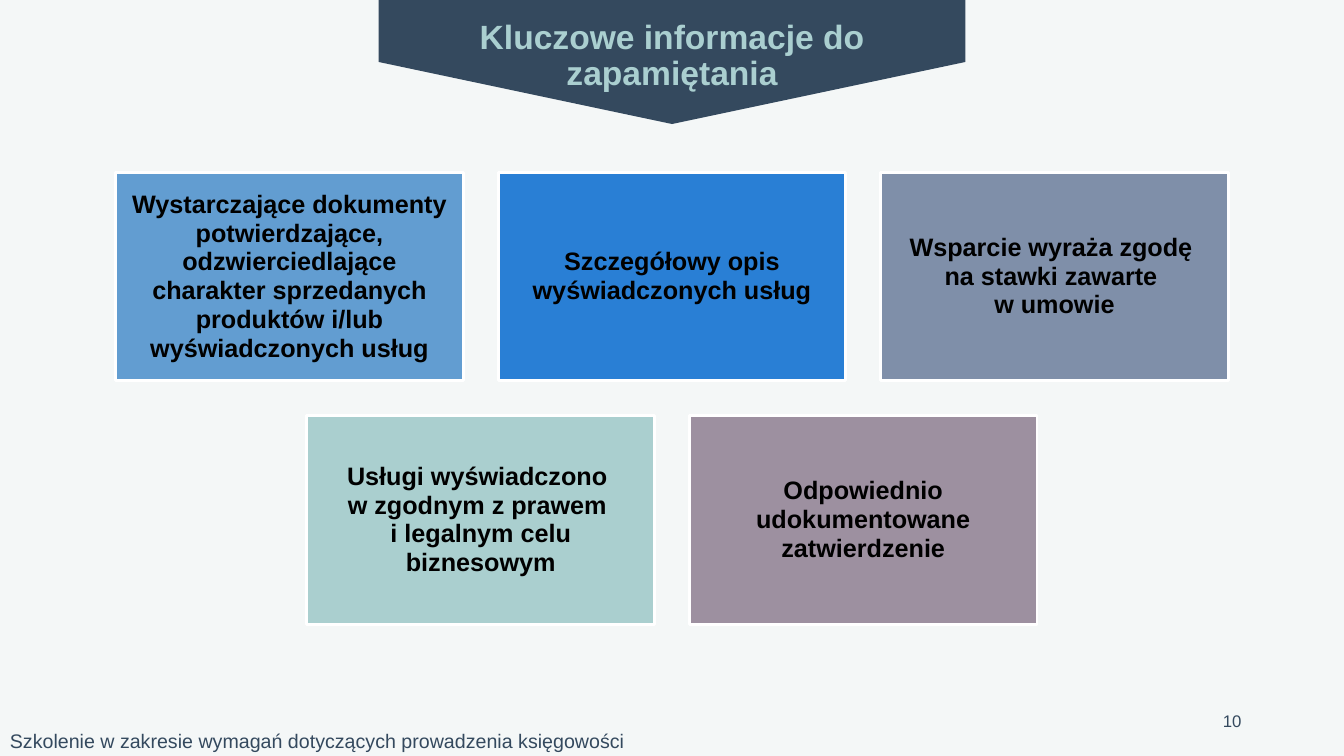
from dataclasses import dataclass

from pptx import Presentation
from pptx.dml.color import RGBColor
from pptx.enum.shapes import MSO_SHAPE
from pptx.enum.text import MSO_ANCHOR, MSO_AUTO_SIZE, PP_ALIGN
from pptx.util import Pt


@dataclass(frozen=True)
class Theme:
    font: str = "Arial"
    back: str = "F4F7F7"
    navy: str = "34495E"
    mint: str = "AACFD0"
    edge: str = "FFFFFF"
    ink: str = "000000"
    title: int = 24
    card: int = 18
    foot: int = 14
    page: int = 12


THEME = Theme()
WIDTH, HEIGHT = 960, 540
CARD_W, CARD_H, GAP, TOP = 248.4, 149, 24.8, 123.1
ROWS = [
    [
        ("Wystarczające dokumenty potwierdzające, odzwierciedlające charakter "
         "sprzedanych produktów i/lub wyświadczonych usług", "629DD1"),
        ("Szczegółowy opis wyświadczonych usług", "297FD5"),
        ("Wsparcie wyraża zgodę \vna stawki zawarte \vw umowie", "7F8FA9"),
    ],
    [
        ("Usługi wyświadczono \vw zgodnym z prawem \vi legalnym celu biznesowym",
         "AACFCF"),
        ("Odpowiednio udokumentowane zatwierdzenie", "9D90A0"),
    ],
]


def paint(fill, color):
    fill.solid()
    fill.fore_color.rgb = RGBColor.from_string(color)


def write(shape, text, size, color, align, bold=False, anchor=MSO_ANCHOR.TOP):
    """Fill the shape with one styled paragraph and return that paragraph."""
    frame = shape.text_frame
    frame.word_wrap = True
    frame.auto_size = MSO_AUTO_SIZE.NONE
    frame.vertical_anchor = anchor
    frame.text = text
    para = frame.paragraphs[0]
    para.alignment = align
    font = para.font
    font.name, font.size, font.bold = THEME.font, Pt(size), bold
    font.color.rgb = RGBColor.from_string(color)
    return para


def add_banner(slide, wide, high):
    """Draw a downward pentagon at the top centre, behind the title."""
    shape = slide.shapes.add_shape(
        MSO_SHAPE.PENTAGON, Pt((WIDTH - high) / 2), Pt((high - wide) / 2),
        Pt(high), Pt(wide))
    shape.rotation = 90
    shape.shadow.inherit = False
    paint(shape.fill, THEME.navy)
    shape.line.fill.background()
    slide.shapes.element.insert(2, shape.element)


def add_title(slide, text):
    title = slide.shapes.title
    title.left, title.top = Pt(270.5), Pt(10.8)
    title.width, title.height = Pt(419), Pt(36)
    para = write(title, text, THEME.title, THEME.mint, PP_ALIGN.CENTER, True)
    para.line_spacing = 0.9


def add_card(slide, left, top, text, color):
    card = slide.shapes.add_shape(
        MSO_SHAPE.RECTANGLE, Pt(left), Pt(top), Pt(CARD_W), Pt(CARD_H))
    card.shadow.inherit = False
    paint(card.fill, color)
    paint(card.line.fill, THEME.edge)
    card.line.width = Pt(2)
    frame = card.text_frame
    frame.margin_left = frame.margin_right = Pt(5.4)
    frame.margin_top = frame.margin_bottom = Pt(5.4)
    para = write(card, text, THEME.card, THEME.ink, PP_ALIGN.CENTER, True,
                 MSO_ANCHOR.MIDDLE)
    para.line_spacing = 0.95


def add_cards(slide):
    """Lay out each row of cards centred on the slide."""
    for row, cards in enumerate(ROWS):
        start = (WIDTH - len(cards) * (CARD_W + GAP) + GAP) / 2
        for col, (text, color) in enumerate(cards):
            add_card(slide, start + col * (CARD_W + GAP),
                     TOP + row * (CARD_H + GAP), text, color)


def add_note(slide, box, text, size, align, anchor):
    note = slide.shapes.add_textbox(*map(Pt, box))
    write(note, text, size, THEME.navy, align, anchor=anchor)


def main():
    deck = Presentation()
    deck.slide_width, deck.slide_height = Pt(WIDTH), Pt(HEIGHT)
    slide = deck.slides.add_slide(deck.slide_layouts[5])
    paint(slide.background.fill, THEME.back)
    add_banner(slide, 419, 88.6)
    add_title(slide, "Kluczowe informacje do zapamiętania")
    add_cards(slide)
    add_note(slide, (0, 517, 474, 24.5),
             "Szkolenie w zakresie wymagań dotyczących prowadzenia księgowości",
             THEME.foot, PP_ALIGN.LEFT, MSO_ANCHOR.TOP)
    add_note(slide, (678, 500.5, 216, 28.8), "10",
             THEME.page, PP_ALIGN.RIGHT, MSO_ANCHOR.MIDDLE)
    deck.save("out.pptx")


if __name__ == "__main__":
    main()
